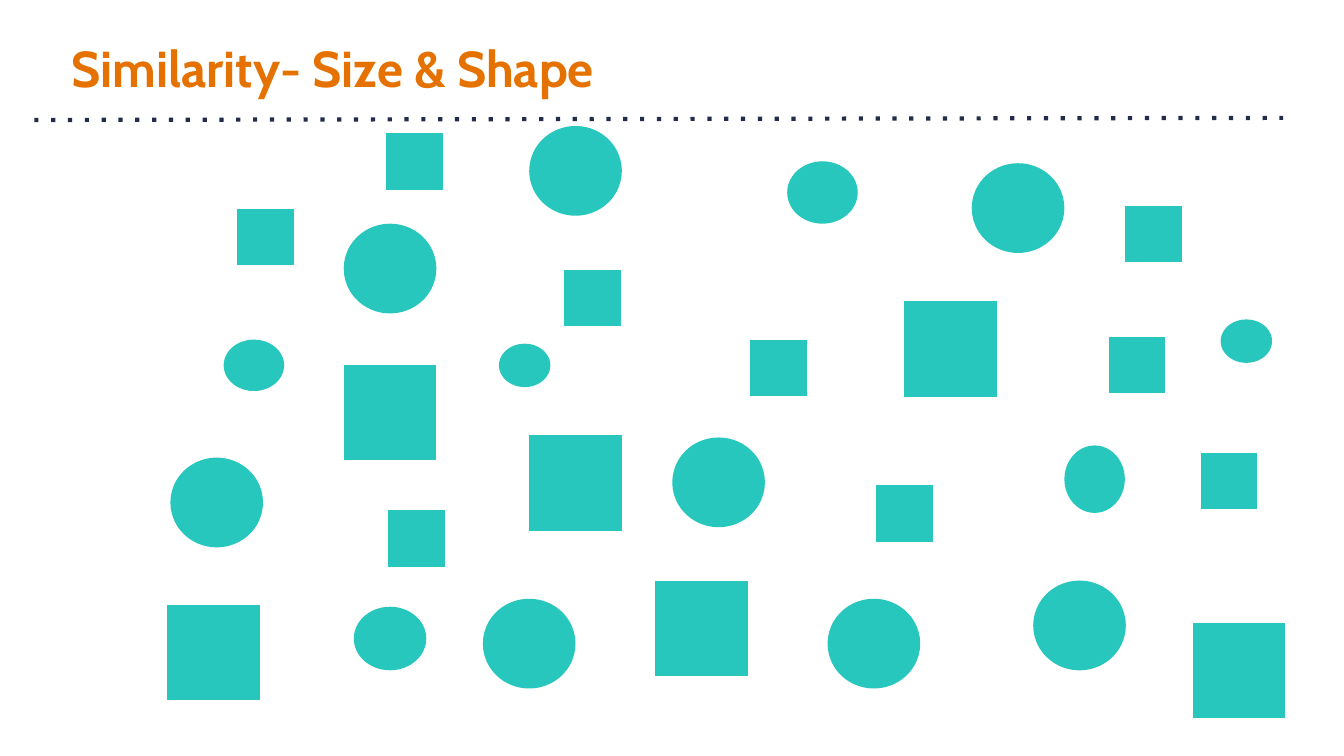
from dataclasses import dataclass

from lxml import etree
from pptx import Presentation
from pptx.dml.color import RGBColor
from pptx.enum.shapes import MSO_CONNECTOR, MSO_SHAPE
from pptx.enum.text import MSO_ANCHOR, PP_ALIGN
from pptx.oxml.ns import qn
from pptx.util import Pt

SQUARE = MSO_SHAPE.FLOWCHART_PROCESS
OVAL = MSO_SHAPE.OVAL
STRAIGHT = MSO_CONNECTOR.STRAIGHT
MIDDLE = MSO_ANCHOR.MIDDLE
LEFT = PP_ALIGN.LEFT


@dataclass(frozen=True)
class Theme:
    title: RGBColor = RGBColor(0xE5, 0x72, 0x00)
    rule: RGBColor = RGBColor(0x23, 0x2D, 0x4B)
    figure: RGBColor = RGBColor(0x27, 0xC7, 0xBD)
    font: str = "Cabin"
    title_size: int = 36


theme = Theme()

presentation = Presentation()
presentation.slide_width = Pt(960)
presentation.slide_height = Pt(540)
slide = presentation.slides.add_slide(presentation.slide_layouts[6])

# Dotted rule under the title
rule = slide.shapes.add_connector(STRAIGHT, Pt(24.5), Pt(85.7), Pt(916.6), Pt(84.2))
rule.line.color.rgb = theme.rule
rule.line.width = Pt(3)
etree.SubElement(rule.line._ln, qn("a:prstDash"), val="dot")
etree.SubElement(rule._element.spPr, qn("a:effectLst"))

# Title
title = slide.shapes.add_textbox(Pt(43.9), Pt(17.3), Pt(872.6), Pt(67))
frame = title.text_frame
frame.word_wrap = True
frame.vertical_anchor = MIDDLE
frame.margin_left = frame.margin_right = Pt(7.2)
frame.margin_top = frame.margin_bottom = Pt(7.2)
paragraph = frame.paragraphs[0]
paragraph.alignment = LEFT
paragraph.line_spacing = 0.9
run = paragraph.add_run()
run.text = "Similarity- Size & Shape"
run.font.name = theme.font
run.font.size = Pt(theme.title_size)
run.font.bold = True
run.font.color.rgb = theme.title

# Figures grouped by kind and size: (kind, width, height, top-left corners)
figure_groups = [
    # Large squares
    (SQUARE, 66.2, 68, [
        (378, 311), (245.5, 260.6), (645.8, 215.3),
        (468, 414.7), (119.5, 432), (851.8, 445),
    ]),
    # Small squares
    (SQUARE, 40.5, 40.5, [
        (535.7, 242.6), (403.2, 192.5), (803.5, 146.9),
        (625.7, 346.3), (277.2, 364.3), (169.2, 149),
        (275.8, 95), (792, 240.5), (857.5, 323.3),
    ]),
    # Large circles
    (OVAL, 66.2, 64.1, [
        (245.5, 159.8), (480.2, 312.5), (121.7, 326.9), (344.9, 427.7),
        (378, 90), (694.1, 116.6), (591.1, 427.7), (738, 414.7),
    ]),
    # Small ovals
    (OVAL, 50.4, 44.6, [(562.3, 115.2)]),
    (OVAL, 43.2, 48.2, [(760.3, 318.2)]),
    (OVAL, 51.8, 45.4, [(252.7, 433.4)]),
    (OVAL, 43.2, 36.7, [(159.8, 242.6)]),
    (OVAL, 36.7, 31, [(356.4, 245.5), (871.9, 228.2)]),
]

for kind, width, height, corners in figure_groups:
    for left, top in corners:
        shape = slide.shapes.add_shape(kind, Pt(left), Pt(top), Pt(width), Pt(height))
        shape.shadow.inherit = False
        shape.fill.solid()
        shape.fill.fore_color.rgb = theme.figure
        shape.line.fill.background()

presentation.save("out.pptx")
